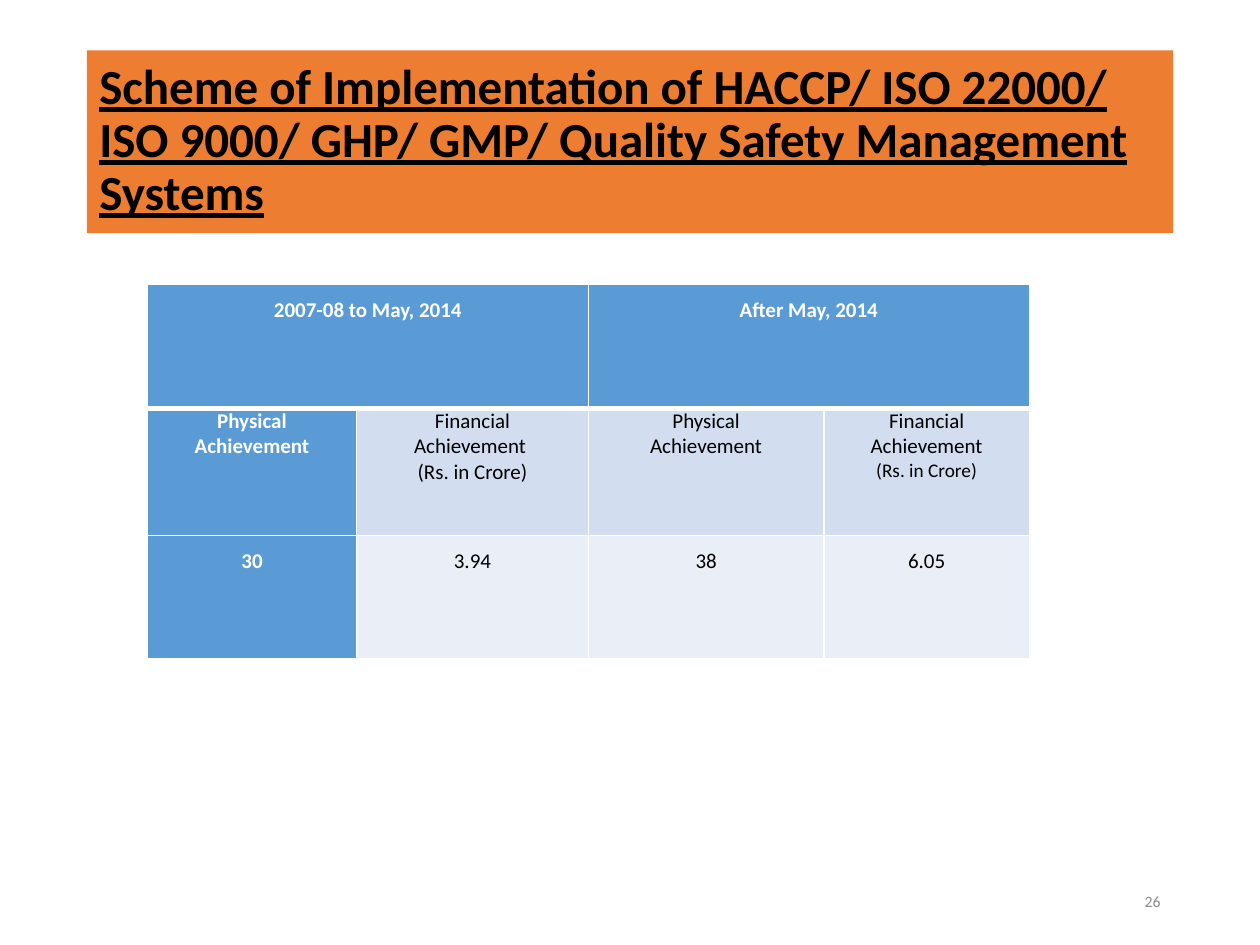
from lxml.etree import SubElement
from pptx import Presentation
from pptx.dml.color import RGBColor
from pptx.enum.shapes import MSO_SHAPE
from pptx.enum.text import MSO_ANCHOR, PP_ALIGN
from pptx.oxml.ns import qn
from pptx.util import Inches, Pt

COLORS = {
    "orange": "ED7D31", "blue": "5B9BD5", "light": "D2DEEF", "pale": "EAEFF7",
    "white": "FFFFFF", "black": "000000", "gray": "8C8C8C",
}
COLUMN_WIDTHS = [1.66, 1.84, 1.87, 1.63]
ROW_HEIGHTS = [0.98, 1.01, 0.98]
ROW_FILLS = ["blue", "light", "pale"]
ROW_SPACINGS = [1.5, 1.0, 1.5]
ROWS = [
    ["2007-08 to May, 2014", "", "After May, 2014", ""],
    ["Physical\nAchievement", "Financial\nAchievement \n(Rs. in Crore)",
     "Physical\nAchievement", "Financial\nAchievement\n(Rs. in Crore)"],
    ["30", "3.94", "38", "6.05"],
]


def rgb(name):
    return RGBColor.from_string(COLORS[name])


def write_text(frame, text, color, alignment, spacing=1.0, **font_format):
    """Fill a text frame, one paragraph for each line of text."""
    frame.word_wrap = True
    for index, line in enumerate(text.split("\n")):
        paragraph = frame.paragraphs[0] if index == 0 else frame.add_paragraph()
        paragraph.alignment = alignment
        paragraph.line_spacing = spacing
        run = paragraph.add_run()
        run.text = line
        run.font.name = "Calibri"
        run.font.color.rgb = rgb(color)
        for name, value in font_format.items():
            setattr(run.font, name, value)


def add_title(slide, text):
    shape = slide.shapes.add_shape(
        MSO_SHAPE.RECTANGLE, Inches(0.69), Inches(0.4), Inches(8.62), Inches(1.45))
    shape.shadow.inherit = False
    shape.fill.solid()
    shape.fill.fore_color.rgb = rgb("orange")
    shape.line.fill.background()
    shape.text_frame.vertical_anchor = MSO_ANCHOR.MIDDLE
    write_text(shape.text_frame, text, "black", PP_ALIGN.LEFT, 0.9,
               size=Pt(28), bold=True, underline=True)


def set_borders(cell, widths):
    """Draw white cell borders; widths maps each side to points."""
    properties = cell._tc.get_or_add_tcPr()
    for side, width in widths.items():
        line = SubElement(properties, qn(f"a:ln{side}"), w=str(Pt(width)))
        fill = SubElement(line, qn("a:solidFill"))
        SubElement(fill, qn("a:srgbClr"), val=COLORS["white"])


def format_cell(cell, row, column):
    cell_format = {
        "margin_left": Inches(0.07), "margin_right": Inches(0.07),
        "margin_top": 0, "margin_bottom": 0, "vertical_anchor": MSO_ANCHOR.TOP,
    }
    for name, value in cell_format.items():
        setattr(cell, name, value)
    set_borders(cell, {"L": 1, "R": 1, "T": 3 if row == 1 else 1,
                       "B": 3 if row == 0 else 1})
    cell.fill.solid()
    cell.fill.fore_color.rgb = rgb("blue" if column == 0 else ROW_FILLS[row])


def add_achievement_table(slide):
    table = slide.shapes.add_table(
        len(ROWS), len(COLUMN_WIDTHS), Inches(1.17), Inches(2.26),
        Inches(sum(COLUMN_WIDTHS)), Inches(sum(ROW_HEIGHTS))).table
    for column, width in zip(table.columns, COLUMN_WIDTHS):
        column.width = Inches(width)
    for table_row, height in zip(table.rows, ROW_HEIGHTS):
        table_row.height = Inches(height)
    for first in (0, 2):
        table.cell(0, first).merge(table.cell(0, first + 1))
    for row, texts in enumerate(ROWS):
        for column, text in enumerate(texts):
            cell = table.cell(row, column)
            format_cell(cell, row, column)
            if text:
                heading = row == 0 or column == 0
                write_text(cell.text_frame, text, "white" if heading else "black",
                           PP_ALIGN.CENTER, ROW_SPACINGS[row],
                           size=Pt(12), bold=heading)
    unit_note = table.cell(1, 3).text_frame.paragraphs[-1]
    unit_note.runs[0].font.size = Pt(11)


def add_page_number(slide, text):
    shape = slide.shapes.add_textbox(
        Inches(7.06), Inches(6.95), Inches(2.25), Inches(0.4))
    shape.text_frame.vertical_anchor = MSO_ANCHOR.MIDDLE
    write_text(shape.text_frame, text, "gray", PP_ALIGN.RIGHT, size=Pt(9))


def main():
    presentation = Presentation()
    presentation.slide_width = Inches(10)
    presentation.slide_height = Inches(7.5)
    slide = presentation.slides.add_slide(presentation.slide_layouts[6])
    add_title(slide, "Scheme of Implementation of HACCP/ ISO 22000/ ISO 9000/ "
                     "GHP/ GMP/ Quality Safety Management Systems")
    add_achievement_table(slide)
    add_page_number(slide, "26")
    presentation.save("out.pptx")


if __name__ == "__main__":
    main()
